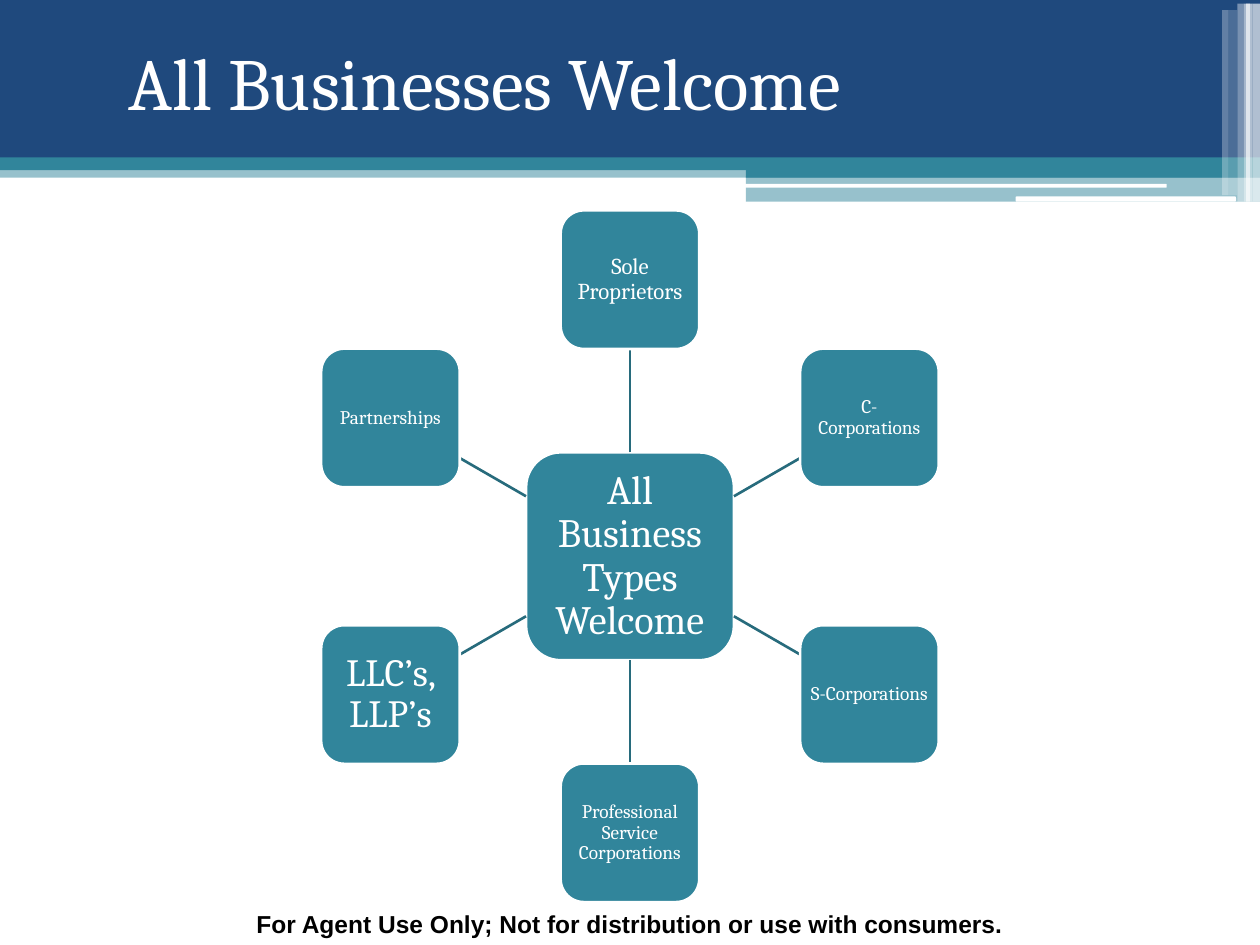
import math

from pptx import Presentation
from pptx import util as u
from pptx.dml.color import RGBColor
from pptx.enum import shapes, text
from pptx.oxml.ns import qn
from lxml import etree

WIDTH, HEIGHT = 10, 7.5
NAVY, TEAL, DARK_TEAL, WHITE, BLACK = "1F497D", "31859B", "276B7C", "FFFFFF", "000000"
RECT = shapes.MSO_SHAPE.RECTANGLE
ROUND = shapes.MSO_SHAPE.ROUNDED_RECTANGLE

# kind, (left, top, width, height), colour, opacity in percent
BANNER = [
    (RECT, (0, 1.32, 10, 0.09), TEAL, 50),
    (RECT, (0, 0, 10, 1.26), NAVY, 100),
    (RECT, (0, 1.25, 10, 0.1), TEAL, 100),
    (RECT, (5.92, 1.31, 4.08, 0.1), TEAL, 100),
    (RECT, (5.92, 1.4, 4.08, 0.2), TEAL, 50),
    (ROUND, (5.91, 1.46, 3.35, 0.03), WHITE, 100),
    (ROUND, (8.06, 1.56, 1.75, 0.04), WHITE, 100),
]
# left, width, opacity, top margin of the vertical stripes
STRIPES = [
    (9.94, 0.07, 65, 0.03), (9.89, 0.05, 65, 0.03), (9.87, 0.05, 60, 0.03),
    (9.82, 0.05, 40, 0.03), (9.75, 0.07, 20, 0.08), (9.7, 0.05, 30, 0.08),
]
STRIPE_MIDDLE = 0.815

TITLE = "All Businesses Welcome"
FOOTER = "For Agent Use Only; Not for distribution or use with consumers."
HUB = ("All Business Types Welcome", 23, 0.06)
# text, size, inset; clockwise from the top
SPOKES = [
    ("Sole Proprietors", 13, 0.04),
    ("C-Corporations", 11, 0.03),
    ("S-Corporations", 11, 0.03),
    ("Professional Service\vCorporations", 11, 0.03),
    ("LLC’s, LLP’s", 22, 0.06),
    ("Partnerships", 11, 0.03),
]
CENTER_X, CENTER_Y = WIDTH / 2, 4.415
HUB_SIZE, NODE_SIZE, RADIUS = 1.65, 1.1, 2.195


def rgb(value):
    return RGBColor.from_string(value)


def inches(*values):
    return [u.Inches(value) for value in values]


def add_block(slide, kind, box, color, opacity=100):
    shape = slide.shapes.add_shape(kind, *inches(*box))
    shape.shadow.inherit = False
    shape.fill.solid()
    shape.fill.fore_color.rgb = rgb(color)
    shape.line.fill.background()
    if opacity < 100:
        tint = shape.fill._xPr.find(f"{qn('a:solidFill')}/{qn('a:srgbClr')}")
        etree.SubElement(tint, qn("a:alpha"), val=str(opacity * 1000))
    return shape


def write(shape, words, align, spacing=1.0, insets=(0.1, 0.05), **font):
    frame = shape.text_frame
    frame.word_wrap = True
    frame.vertical_anchor = text.MSO_ANCHOR.MIDDLE
    frame.margin_left = frame.margin_right = u.Inches(insets[0])
    frame.margin_top = frame.margin_bottom = u.Inches(insets[1])
    paragraph = frame.paragraphs[0]
    paragraph.text = words
    paragraph.alignment = align
    paragraph.line_spacing = spacing
    color = font.pop("color")
    for run in paragraph.runs:
        run.font.color.rgb = rgb(color)
        for name, value in font.items():
            setattr(run.font, name, value)


def add_node(slide, x, y, size, words, points, inset):
    """Rounded square centred on x, y."""
    shape = add_block(slide, ROUND, (x - size / 2, y - size / 2, size, size), TEAL)
    shape.line.color.rgb = rgb(WHITE)
    shape.line.width = u.Pt(1.5)
    write(shape, words, text.PP_ALIGN.CENTER, 0.9, (inset, inset),
          name="Cambria", size=u.Pt(points), color=WHITE)
    return shape


def add_spoke(slide, hub, angle, label):
    """Node at the given angle from the top, with a line between facing edges."""
    dx, dy = math.sin(angle), -math.cos(angle)
    reach = max(abs(dx), abs(dy))
    start = HUB_SIZE / 2 / reach
    end = RADIUS - NODE_SIZE / 2 / reach
    line = slide.shapes.add_connector(
        shapes.MSO_CONNECTOR.STRAIGHT,
        *inches(CENTER_X + start * dx, CENTER_Y + start * dy,
                CENTER_X + end * dx, CENTER_Y + end * dy))
    line.line.color.rgb = rgb(DARK_TEAL)
    line.line.width = u.Pt(1.5)
    etree.SubElement(line._element.spPr, qn("a:effectLst"))
    node = add_node(slide, CENTER_X + RADIUS * dx, CENTER_Y + RADIUS * dy,
                    NODE_SIZE, *label)
    if abs(dx) < 0.01:
        hub_side, node_side = (0, 2) if dy < 0 else (2, 0)
        line.begin_connect(hub, hub_side)
        line.end_connect(node, node_side)


def main():
    presentation = Presentation()
    presentation.slide_width, presentation.slide_height = inches(WIDTH, HEIGHT)
    slide = presentation.slides.add_slide(presentation.slide_layouts[6])

    for block in BANNER:
        add_block(slide, *block)
    for left, width, opacity, top in STRIPES:
        box = (left, top, width, 2 * (STRIPE_MIDDLE - top))
        add_block(slide, RECT, box, WHITE, opacity)

    footer = slide.shapes.add_textbox(*inches(0, 7.16, WIDTH, 0.34))
    write(footer, FOOTER, text.PP_ALIGN.CENTER,
          name="Arial", size=u.Pt(14), bold=True, color=BLACK)
    title = slide.shapes.add_textbox(*inches(0.92, 0.02, 7.45, 1.25))
    write(title, TITLE, text.PP_ALIGN.LEFT,
          name="Cambria", size=u.Pt(42), color=WHITE)

    hub = add_node(slide, CENTER_X, CENTER_Y, HUB_SIZE, *HUB)
    for index, label in enumerate(SPOKES):
        add_spoke(slide, hub, math.tau * index / len(SPOKES), label)

    presentation.save("out.pptx")


if __name__ == "__main__":
    main()
